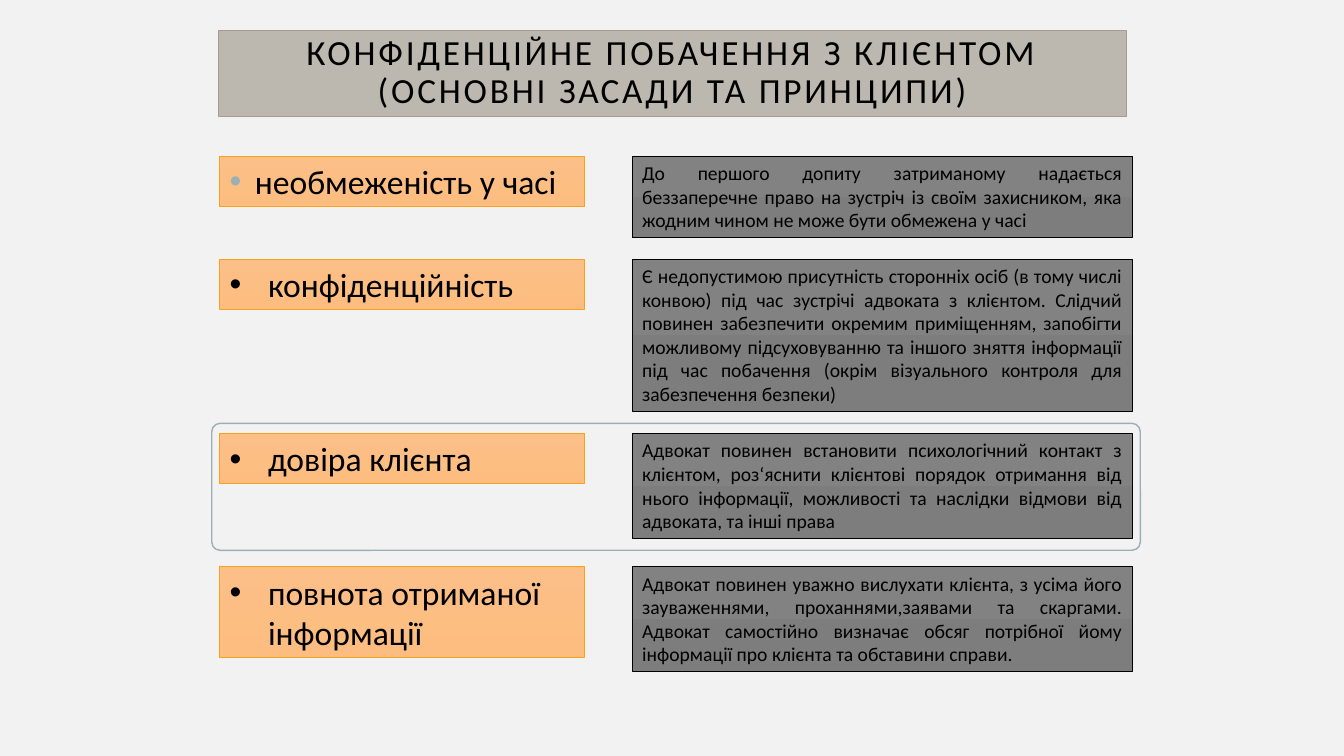
from dataclasses import dataclass

from lxml import etree
from pptx import Presentation
from pptx.dml.color import RGBColor
from pptx.enum.shapes import MSO_SHAPE
from pptx.enum.text import MSO_ANCHOR, MSO_AUTO_SIZE, PP_ALIGN
from pptx.oxml.ns import qn
from pptx.util import Inches, Pt

RECT, ROUND_RECT = MSO_SHAPE.RECTANGLE, MSO_SHAPE.ROUNDED_RECTANGLE
TOP, MIDDLE = MSO_ANCHOR.TOP, MSO_ANCHOR.MIDDLE
LEFT, CENTER, JUSTIFY = PP_ALIGN.LEFT, PP_ALIGN.CENTER, PP_ALIGN.JUSTIFY
NO_FIT = MSO_AUTO_SIZE.NONE
GROW = MSO_AUTO_SIZE.SHAPE_TO_FIT_TEXT


@dataclass(frozen=True)
class Theme:
    """Colours, font and type sizes of the slide."""
    font: str = "Calibri"
    text: str = "000000"
    background: str = "F2F2F2"
    accent: str = "9BAFB5"
    title_fill: str = "BDB8AF"
    title_line: str = "A39C8F"
    label_fill: tuple = ("FCBF87", "FDBD80")
    label_line: str = "F6A21D"
    detail_fill: tuple = ("828282", "7D7D7D")
    detail_line: str = "000000"
    title_size: float = 25.2
    label_size: float = 24
    detail_size: float = 14


THEME = Theme()
TITLE = "КОНФІДЕНЦІЙНЕ ПОБАЧЕННЯ З КЛІЄНТОМ\v(ОСНОВНІ ЗАСАДИ ТА ПРИНЦИПИ)"
ROW_LEFT, ROW_WIDTH = 2.18, 9.05
LABEL_WIDTH, DETAIL_WIDTH = 3.62, 4.96

# top, label height, detail height, bullet indent, bullet colour, label, detail
ROWS = [
    (1.55, 0.5, 0.81, 0.25, THEME.accent, "необмеженість у часі",
     "До першого допиту затриманому надається беззаперечне право на зустріч "
     "із своїм захисником, яка жодним чином не може бути обмежена у часі"),
    (2.57, 0.5, 1.51, 0.38, THEME.text, "конфіденційність",
     "Є недопустимою присутність сторонніх осіб (в тому числі конвою) під час "
     "зустрічі адвоката з клієнтом. Слідчий повинен забезпечити окремим "
     "приміщенням, запобігти можливому підсуховуванню та іншого зняття "
     "інформації під час побачення (окрім візуального контроля для "
     "забезпечення безпеки)"),
    (4.3, 0.5, 1.04, 0.38, THEME.text, "довіра клієнта",
     "Адвокат повинен встановити психологічний контакт з клієнтом, "
     "роз‘яснити клієнтові порядок отримання від нього інформації, "
     "можливості та наслідки відмови від адвоката, та інші права"),
    (5.62, 0.9, 1.04, 0.38, THEME.text, "повнота отриманої інформації",
     "Адвокат повинен уважно вислухати клієнта, з усіма його зауваженнями, "
     "проханнями,заявами та скаргами. Адвокат самостійно визначає обсяг "
     "потрібної йому інформації про клієнта та обставини справи."),
]


def rgb(value):
    """Turn a hex string into a colour."""
    return RGBColor.from_string(value)


def write(sp, text, size, align=LEFT, anchor=TOP, fit=NO_FIT, spacing=None, tracking=0):
    """Put formatted text into a shape and return its paragraph."""
    tf = sp.text_frame
    tf.word_wrap = True
    tf.auto_size = fit
    tf.vertical_anchor = anchor
    p = tf.paragraphs[0]
    p.text = text
    p.alignment = align
    p.line_spacing = spacing
    for r in p.runs:
        r.font.name = THEME.font
        r.font.size = Pt(size)
        r.font.color.rgb = rgb(THEME.text)
        if tracking:
            r.font._element.set("spc", str(tracking * 100))
    return p


def add_bullet(p, indent, color):
    """Give a paragraph a hanging round bullet."""
    pPr = p._p.get_or_add_pPr()
    pPr.set("marL", str(Inches(indent)))
    pPr.set("indent", str(-Inches(indent)))
    clr = etree.SubElement(pPr, qn("a:buClr"))
    etree.SubElement(clr, qn("a:srgbClr"), val=color)
    etree.SubElement(pPr, qn("a:buFont"), typeface="Arial")
    etree.SubElement(pPr, qn("a:buChar"), char="•")


def add_panel(s, x, y, w, h, fill, line):
    """Add a thinly outlined rectangle with a vertical gradient."""
    sp = s.shapes.add_shape(RECT, Inches(x), Inches(y), Inches(w), Inches(h))
    sp.shadow.inherit = False
    sp.fill.gradient()
    sp.fill.gradient_angle = 270
    for stop, color in zip(sp.fill.gradient_stops, fill):
        stop.color.rgb = rgb(color)
    sp.line.color.rgb = rgb(line)
    sp.line.width = Pt(0.5)
    return sp


def add_title(s, x, y, w, h):
    """Place and format the title placeholder."""
    sp = s.shapes.title
    sp.left, sp.top, sp.width, sp.height = map(Inches, (x, y, w, h))
    sp.fill.solid()
    sp.fill.fore_color.rgb = rgb(THEME.title_fill)
    sp.line.color.rgb = rgb(THEME.title_line)
    sp.line.width = Pt(0.5)
    tf = sp.text_frame
    tf.margin_left = tf.margin_right = tf.margin_top = tf.margin_bottom = Inches(0.2)
    write(sp, TITLE, THEME.title_size, align=CENTER, anchor=MIDDLE, spacing=0.9, tracking=2)


def add_frame(s, x, y, w, h):
    """Add the rounded frame behind a row."""
    sp = s.shapes.add_shape(ROUND_RECT, Inches(x), Inches(y), Inches(w), Inches(h))
    sp.adjustments[0] = 0.066
    sp.shadow.inherit = False
    sp.fill.solid()
    sp.fill.fore_color.rgb = rgb(THEME.background)
    sp.line.color.rgb = rgb(THEME.accent)
    sp.line.width = Pt(1)


def add_row(s, x, y, w, label_h, detail_h, indent, bullet, label, detail):
    """Add a principle at the left and its explanation at the right."""
    sp = add_panel(s, x, y, LABEL_WIDTH, label_h, THEME.label_fill, THEME.label_line)
    add_bullet(write(sp, label, THEME.label_size), indent, bullet)
    sp = add_panel(s, x + w - DETAIL_WIDTH, y, DETAIL_WIDTH, detail_h,
                   THEME.detail_fill, THEME.detail_line)
    write(sp, detail, THEME.detail_size, align=JUSTIFY, fit=GROW)


def main():
    """Build and save the slide."""
    prs = Presentation()
    prs.slide_width, prs.slide_height = Inches(13.33), Inches(7.5)
    s = prs.slides.add_slide(prs.slide_layouts[5])
    s.background.fill.solid()
    s.background.fill.fore_color.rgb = rgb(THEME.background)
    add_frame(s, 2.1, 4.2, 9.21, 1.26)
    add_title(s, 2.17, 0.3, 9, 0.85)
    for top, *row in ROWS:
        add_row(s, ROW_LEFT, top, ROW_WIDTH, *row)
    prs.save("out.pptx")


if __name__ == "__main__":
    main()
